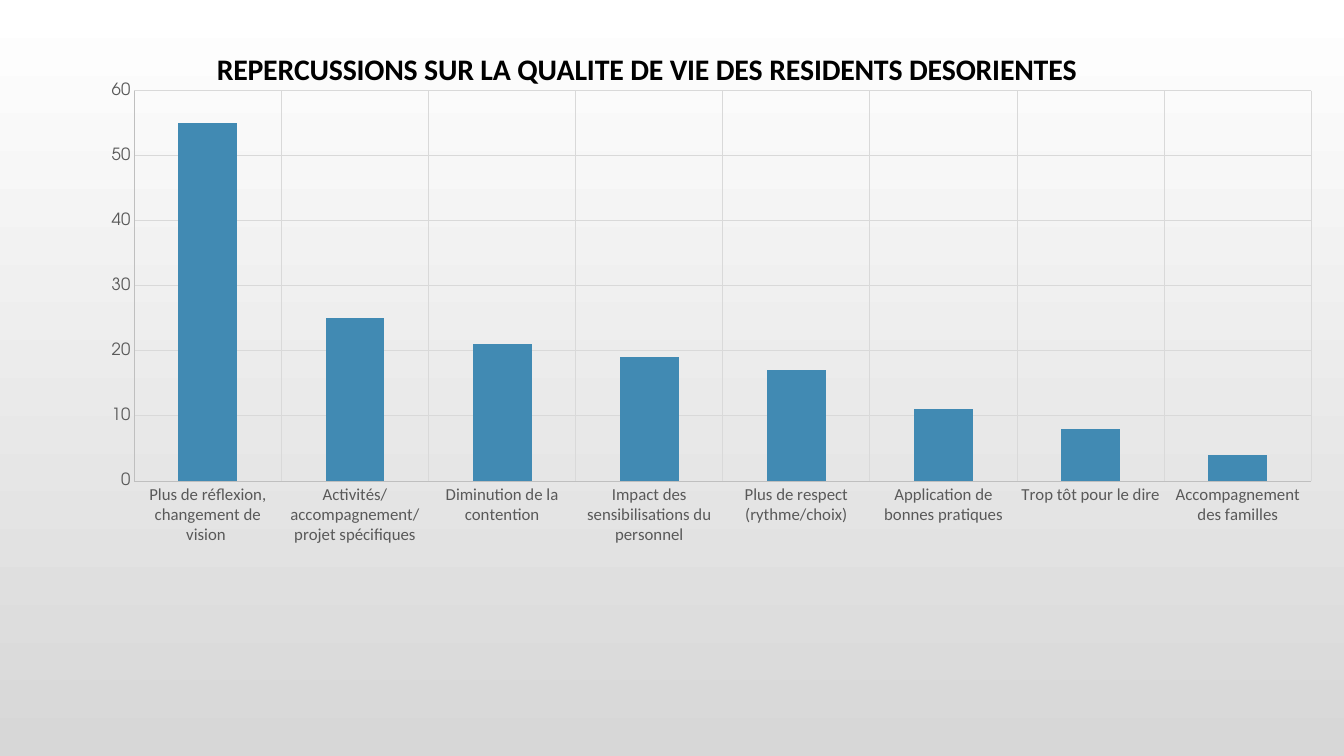
from lxml import etree
from pptx import Presentation
from pptx import util as u
from pptx.chart.data import CategoryChartData
from pptx.dml.color import RGBColor
from pptx.enum import chart as ch
from pptx.oxml.ns import qn

COLORS = {
    "bg_top": "FFFFFF",
    "bg_bottom": "D7D7D7",
    "bar": "418AB3",
    "title": "000000",
    "label": "595959",
    "axis": "BFBFBF",
    "grid": "D9D9D9",
}
HEADING, BODY = "Calibri", "TeX Gyre Adventor"

TITLE = "REPERCUSSIONS SUR LA QUALITE DE VIE DES RESIDENTS DESORIENTES"
REPERCUSSIONS = {
    "Plus de réflexion, changement de vision ": 55,
    "Activités/accompagnement/projet spécifiques": 25,
    "Diminution de la contention": 21,
    "Impact des sensibilisations du personnel": 19,
    "Plus de respect (rythme/choix)": 17,
    "Application de bonnes pratiques": 11,
    "Trop tôt pour le dire": 8,
    "Accompagnement des familles": 4,
}


def rgb(name):
    return RGBColor.from_string(COLORS[name])


def set_font(font, name, size, color, bold=False):
    font.name, font.size, font.bold = name, u.Pt(size), bold
    font.color.rgb = rgb(color)


def set_line(line, color):
    line.color.rgb = rgb(color)
    line.width = u.Pt(0.75)


def set_background(slide):
    fill = slide.background.fill
    fill.gradient()
    fill.gradient_angle = 270
    for stop, position, color in zip(fill.gradient_stops, (0, 1), ("bg_top", "bg_bottom")):
        stop.position = position
        stop.color.rgb = rgb(color)


def set_layout(parent, index, **values):
    """Place a chart part by fractions of the chart area."""
    for old in parent.findall(qn("c:layout")):
        parent.remove(old)
    layout = etree.Element(qn("c:layout"))
    manual = etree.SubElement(layout, qn("c:manualLayout"))
    for tag, value in values.items():
        etree.SubElement(manual, qn(f"c:{tag}")).set("val", str(value))
    parent.insert(index, layout)


def style_axis(axis, font_name):
    axis.major_tick_mark = axis.minor_tick_mark = ch.XL_TICK_MARK.NONE
    axis.has_major_gridlines = True
    set_line(axis.major_gridlines.format.line, "grid")
    set_line(axis.format.line, "axis")
    set_font(axis.tick_labels.font, font_name, 12, "label")


def add_title(chart, title):
    tf = chart.chart_title.text_frame
    tf.text = title
    p = tf.paragraphs[0]
    set_font(p.font, HEADING, 21.3, "title", bold=True)
    set_font(p.runs[0].font, HEADING, 21.3, "title", bold=True)
    chart.chart_title.include_in_layout = False
    set_layout(chart.chart_title._element, 1, xMode="edge", yMode="edge", x=0.16, y=0.01)


def add_column_chart(slide, title, values):
    data = CategoryChartData()
    data.categories = list(values)
    data.add_series("Series 1", list(values.values()))
    chart = slide.shapes.add_chart(
        ch.XL_CHART_TYPE.COLUMN_CLUSTERED,
        u.Cm(-0.03), u.Cm(0.91), u.Cm(33.48), u.Cm(17.2), data,
    ).chart
    set_font(chart.font, BODY, 10, "title")
    chart.has_legend = False
    add_title(chart, title)

    # Columns
    plot = chart.plots[0]
    plot.gap_width = 150
    plot.vary_by_categories = False
    fill = plot.series[0].format.fill
    fill.solid()
    fill.fore_color.rgb = rgb("bar")

    # Axes
    style_axis(chart.category_axis, HEADING)
    style_axis(chart.value_axis, BODY)
    chart.value_axis.minimum_scale = 0
    chart.value_axis.maximum_scale = 60
    chart.value_axis.major_unit = 10

    # Plot area
    plot_area = chart._chartSpace.chart.plotArea
    set_layout(plot_area, 0, layoutTarget="inner", xMode="edge", yMode="edge",
               x=0.102, y=0.08, w=0.886, h=0.572)


def main():
    prs = Presentation()
    prs.slide_width, prs.slide_height = u.Cm(33.87), u.Cm(19.05)
    slide = prs.slides.add_slide(prs.slide_layouts[6])
    set_background(slide)
    add_column_chart(slide, TITLE, REPERCUSSIONS)
    prs.save("out.pptx")


if __name__ == "__main__":
    main()
